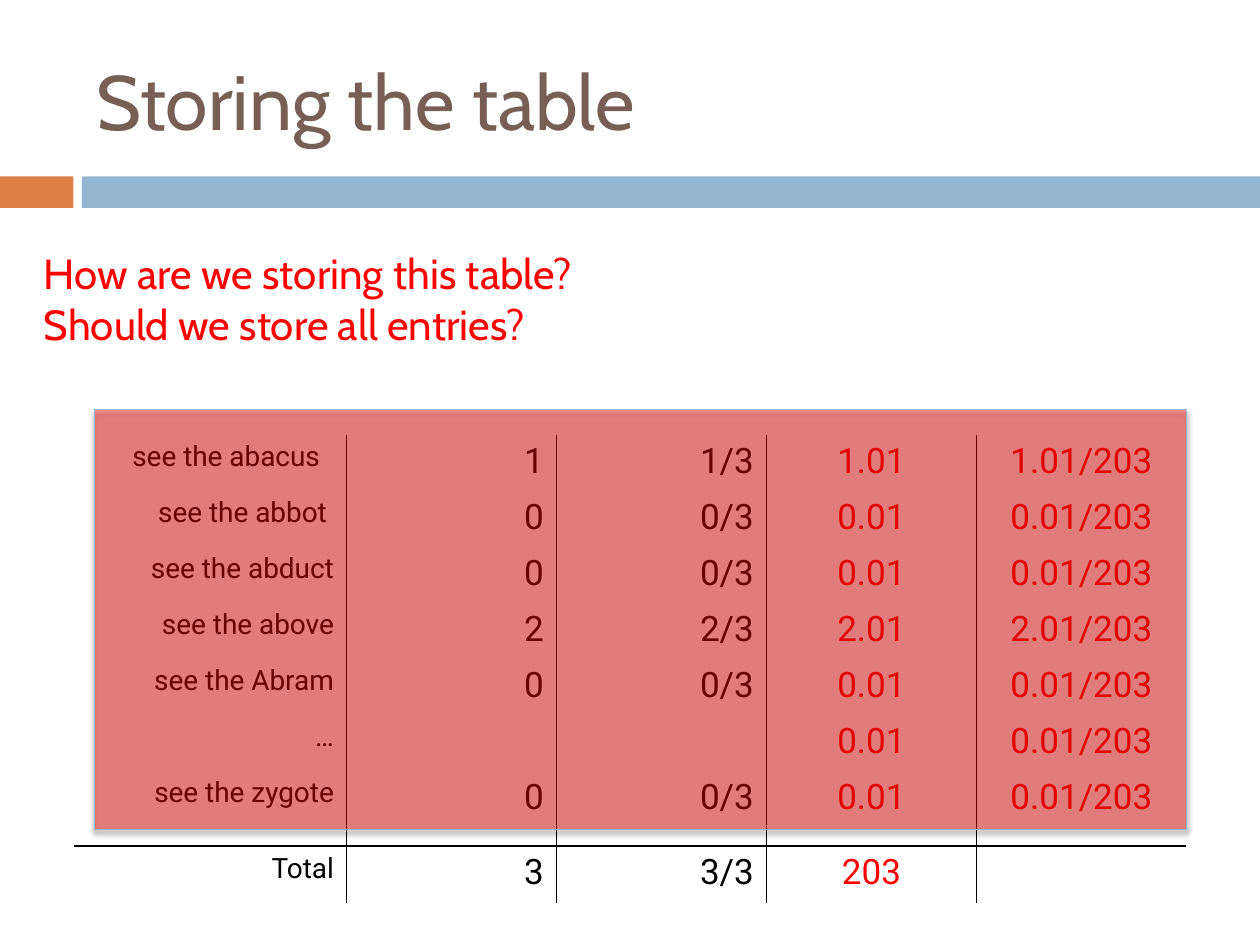
from lxml import etree
from pptx import Presentation, util as u
from pptx.dml.color import RGBColor
from pptx.enum import shapes, text
from pptx.oxml import ns

COLORS = {
    "orange": "DD8047", "blue": "94B6D2", "brown": "775F55",
    "red": "FF0000", "black": "000000",
}
GRID_UNIT = u.Inches(10) // 120
CENTER, RIGHT = text.PP_ALIGN.CENTER, text.PP_ALIGN.RIGHT

COLUMNS = [26, 20, 20, 20, 20]
ROWS = [5.33] * 6 + [7.2, 5.4]
ENTRIES = [
    ("see the abacus  ", "1", "1/3", "1.01", "1.01/203"),
    ("see the abbot ", "0", "0/3", "0.01", "0.01/203"),
    ("see the abduct", "0", "0/3", "0.01", "0.01/203"),
    ("see the above", "2", "2/3", "2.01", "2.01/203"),
    ("see the Abram", "0", "0/3", "0.01", "0.01/203"),
    ("…", "", "", "0.01", "0.01/203"),
    ("see the zygote", "0", "0/3", "0.01", "0.01/203"),
    ("Total", "3", "3/3", "203", ""),
]
COLUMN_STYLES = [(16, "black", RIGHT)] + [(20, "black", RIGHT)] * 2 + [(20, "red", CENTER)] * 2


def rgb(color):
    return RGBColor.from_string(COLORS[color])


def grid(*lengths):
    return [round(length * GRID_UNIT) for length in lengths]


def write(frame, content, size, font, color, align=None):
    frame.text = content
    for paragraph in frame.paragraphs:
        paragraph.alignment = align
        for run in paragraph.runs:
            run.font.size = u.Pt(size)
            run.font.name = font
            run.font.color.rgb = rgb(color)


def add_text(slide, area, content, size, color, anchor=text.MSO_ANCHOR.TOP):
    frame = slide.shapes.add_textbox(*grid(*area)).text_frame
    frame.word_wrap = True
    frame.vertical_anchor = anchor
    write(frame, content, size, "Cabin", color)


def add_bar(slide, area, color):
    bar = slide.shapes.add_shape(shapes.MSO_SHAPE.RECTANGLE, *grid(*area))
    bar.shadow.inherit = False
    bar.fill.solid()
    bar.fill.fore_color.rgb = rgb(color)
    bar.line.fill.background()
    return bar


def set_alpha(color_element, percent):
    etree.SubElement(color_element, ns.qn("a:alpha"), val=str(percent * 1000))


def add_highlight(slide, area):
    highlight = add_bar(slide, area, "red")
    highlight.line.color.rgb = rgb("blue")
    highlight.line.width = u.Pt(0.79)
    properties = highlight.element.spPr
    set_alpha(properties.find(ns.qn("a:solidFill"))[0], 40)
    shadow = etree.SubElement(
        properties.find(ns.qn("a:effectLst")), ns.qn("a:outerShdw"),
        blurRad=str(u.Pt(3)), dist=str(u.Pt(2.4)), dir=str(90 * 60000), rotWithShape="0")
    set_alpha(etree.SubElement(shadow, ns.qn("a:srgbClr"), val=COLORS["black"]), 45)


def set_borders(cell, visible):
    properties = cell._tc.get_or_add_tcPr()
    for position, side in enumerate(("lnL", "lnR", "lnT", "lnB")):
        border = etree.Element(ns.qn(f"a:{side}"), w=str(u.Pt(1)))
        if side in visible:
            fill = etree.SubElement(border, ns.qn("a:solidFill"))
            etree.SubElement(fill, ns.qn("a:srgbClr"), val=COLORS["black"])
        else:
            etree.SubElement(border, ns.qn("a:noFill"))
        properties.insert(position, border)


def inner_borders(row, column):
    total = len(ROWS) - 1
    rules = {
        "lnL": column > 0,
        "lnR": column < len(COLUMNS) - 1,
        "lnT": row == total,
        "lnB": row == total - 1,
    }
    return [side for side, shown in rules.items() if shown]


def add_counts(slide, left, top):
    area = grid(left, top, sum(COLUMNS), sum(ROWS))
    counts = slide.shapes.add_table(len(ROWS), len(COLUMNS), *area).table
    counts.first_row = counts.horz_banding = False
    for column, width in zip(counts.columns, grid(*COLUMNS)):
        column.width = width
    for row, height in zip(counts.rows, grid(*ROWS)):
        row.height = height
    for r, entry in enumerate(ENTRIES):
        for c, (value, (size, color, align)) in enumerate(zip(entry, COLUMN_STYLES)):
            cell = counts.cell(r, c)
            cell.fill.background()
            write(cell.text_frame, value, size, "Roboto", color, align)
            set_borders(cell, inner_borders(r, c))


def main():
    deck = Presentation()
    deck.slide_width, deck.slide_height = grid(120, 90)
    slide = deck.slides.add_slide(deck.slide_layouts[6])
    add_bar(slide, (0, 16.8, 7, 3), "orange")
    add_bar(slide, (7.8, 16.8, 112.2, 3), "blue")
    add_text(slide, (8, 3, 107, 13), "Storing the table", 44, "brown", text.MSO_ANCHOR.MIDDLE)
    add_counts(slide, 7, 41.4)
    add_highlight(slide, (9, 39, 104, 40))
    add_text(slide, (3, 23, 75, 10.9),
             "How are we storing this table?\nShould we store all entries?", 24, "red")
    deck.save("out.pptx")


if __name__ == "__main__":
    main()
